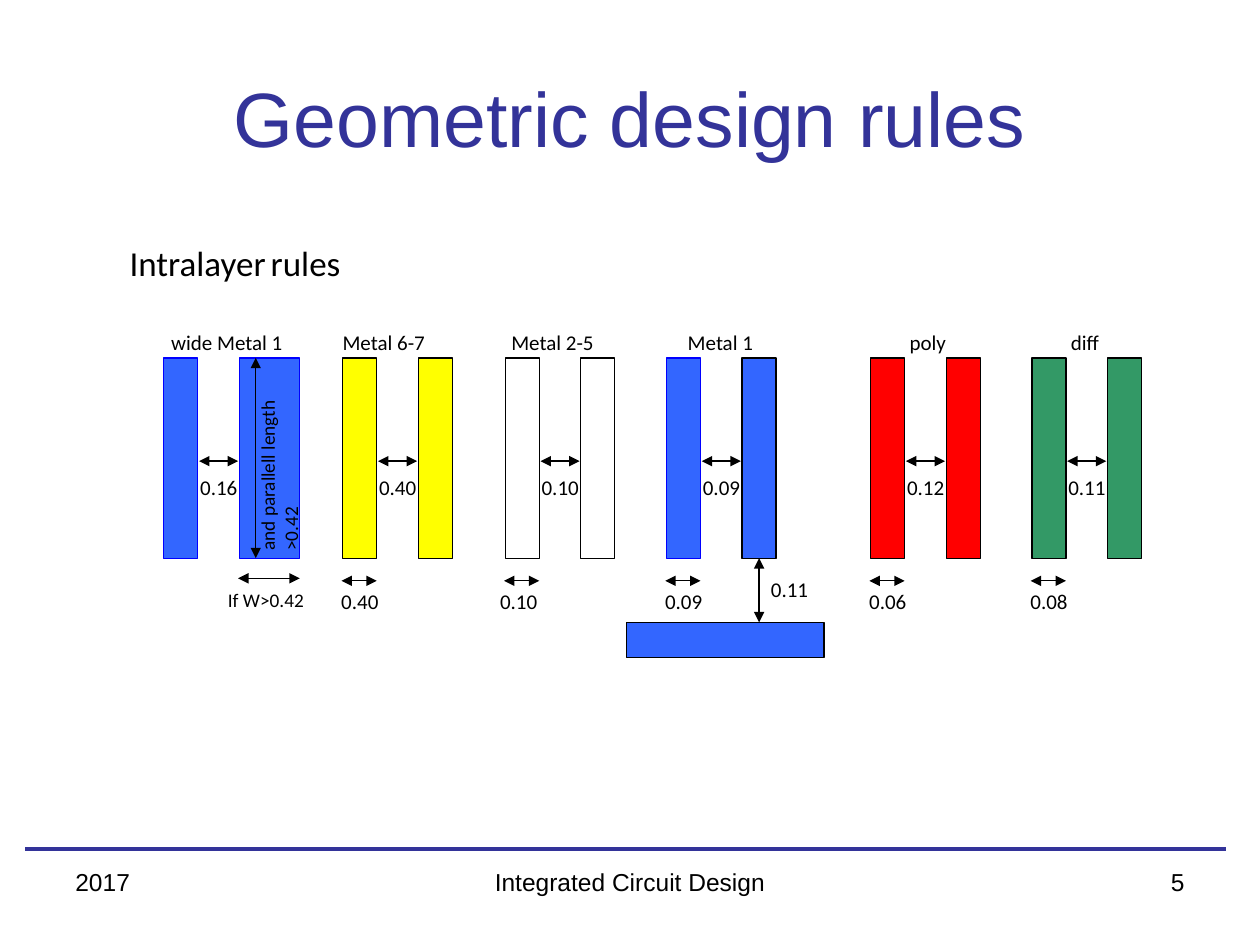
from lxml import etree
from pptx import Presentation
from pptx import util as u
from pptx.dml.color import RGBColor
from pptx.enum import shapes, text
from pptx.oxml.ns import qn

BLACK, BLUE, NAVY = "000000", "3366FF", "333399"
BAR_W, BAR_H, PITCH = 0.27, 1.59, 0.6
LEFT, CENTER, RIGHT = text.PP_ALIGN.LEFT, text.PP_ALIGN.CENTER, text.PP_ALIGN.RIGHT


def color(value):
    return RGBColor.from_string(value)


def add_text(s, box, runs, align=LEFT, anchor=text.MSO_ANCHOR.TOP, font="Calibri", fill=BLACK, vert=None):
    sp = s.shapes.add_textbox(*map(u.Inches, box))
    tf = sp.text_frame
    for name, value in {"word_wrap": True, "vertical_anchor": anchor}.items():
        setattr(tf, name, value)
    if vert:
        tf._txBody.bodyPr.set("vert", vert)
    p = tf.paragraphs[0]
    p.alignment = align
    for words, size in runs:
        r = p.add_run()
        r.text = words
        for name, value in {"name": font, "size": u.Pt(size)}.items():
            setattr(r.font, name, value)
        r.font.color.rgb = color(fill)
    return sp


def add_bar(s, box, fill, line=BLACK):
    sp = s.shapes.add_shape(shapes.MSO_SHAPE.RECTANGLE, *map(u.Inches, box))
    sp.shadow.inherit = False
    sp.fill.solid()
    sp.fill.fore_color.rgb = color(fill)
    sp.line.color.rgb = color(line)
    sp.line.width = u.Pt(0.75)
    return sp


def add_line(s, ends, line=BLACK, width=0.75, arrows=True):
    cxn = s.shapes.add_connector(shapes.MSO_CONNECTOR.STRAIGHT, *map(u.Inches, ends))
    cxn.line.color.rgb = color(line)
    cxn.line.width = u.Pt(width)
    if arrows:
        ln = cxn.line._get_or_add_ln()
        for tag in ("a:headEnd", "a:tailEnd"):
            etree.SubElement(ln, qn(tag), type="triangle")
    etree.SubElement(cxn._element.spPr, qn("a:effectLst"))
    return cxn


def add_header(s, x, y, w):
    add_text(s, (x, y, w, 1.25), [("Geometric design rules", 44)], CENTER,
             text.MSO_ANCHOR.MIDDLE, "Arial", NAVY)
    add_text(s, (x + 0.43, y + 1.57, 2.71, 0.4),
             [("Intralayer", 20), (" ", 12), ("rules", 20)])


def add_footer(s, x, y, w):
    add_line(s, (0.2, y - 0.09, 9.73, y - 0.09), NAVY, 2.25, False)
    columns = (("2017", x, 2.33, LEFT),
               ("Integrated Circuit Design", x + (w - 3.17) / 2, 3.17, CENTER),
               ("5", x + w - 2.33, 2.33, RIGHT))
    for words, left, width, align in columns:
        add_text(s, (left, y, width, 0.52), [(words, 14)], align, font="Arial")


def add_pair(s, x, y, name, name_dx, fill, spacing, lines=(BLACK, BLACK), right_w=BAR_W):
    add_bar(s, (x, y, BAR_W, BAR_H), fill, lines[0])
    right = add_bar(s, (x + PITCH, y, right_w, BAR_H), fill, lines[1])
    add_line(s, (x + BAR_W + 0.01, y + 0.82, x + PITCH - 0.01, y + 0.82))
    add_text(s, (x + 0.19, y + 0.88, 0.55, 0.32), [(spacing, 12)])
    add_text(s, (x + name_dx, 2.57, 1.19, 0.34), [(name, 12)])
    return right


def add_min_width(s, x, y, value, dx=-0.11):
    add_line(s, (x - 0.01, y + 1.77, x + BAR_W, y + 1.77))
    add_text(s, (x + dx, y + 1.78, 0.59, 0.32), [(value, 12)])


def add_wide_metal(s, x, y):
    add_pair(s, x, y, "wide Metal 1", -0.04, BLUE, "0.16", ("0000FF", "0000FF"), 0.48)
    add_line(s, (x + 0.59, y + 1.75, x + 1.08, y + 1.75))
    add_text(s, (x + 0.41, y + 1.78, 0.82, 0.32), [("If W>0.42", 11)])
    add_line(s, (x + 0.73, y, x + 0.73, y + BAR_H))
    add_text(s, (x + 0.68, y - 0.12, 0.42, 1.75),
             [("and parallell length >0.42", 11)], vert="vert270")


def add_metal_1(s, x, y):
    right = add_pair(s, x, y, "Metal 1", 0.07, BLUE, "0.09", ("0000FF", BLACK))
    add_min_width(s, x, y, "0.09")
    add_bar(s, (x - 0.32, y + 2.1, 1.57, 0.28), BLUE)
    center = x + PITCH + BAR_W / 2
    arrow = add_line(s, (center, y + BAR_H, center, y + 2.1))
    arrow.begin_connect(right, 2)
    add_text(s, (x + 0.73, y + 1.69, 0.59, 0.32), [("0.11", 12)])


def add_rules(s, y):
    add_wide_metal(s, 1.3, y)
    layers = (("Metal 6-7", 2.72, -0.1, "FFFF00", "0.40", "0.40", -0.11),
              ("Metal 2-5", 4.01, -0.05, "FFFFFF", "0.10", "0.10", -0.14),
              ("poly", 6.91, 0.21, "FF0000", "0.12", "0.06", -0.11),
              ("diff", 8.19, 0.21, "339966", "0.11", "0.08", -0.11))
    for name, x, name_dx, fill, spacing, width, width_dx in layers:
        add_pair(s, x, y, name, name_dx, fill, spacing)
        add_min_width(s, x, y, width, width_dx)
    add_metal_1(s, 5.29, y)


def main():
    prs = Presentation()
    prs.slide_width, prs.slide_height = u.Inches(10), u.Inches(7.5)
    s = prs.slides.add_slide(prs.slide_layouts[6])
    add_header(s, 0.5, 0.3, 9)
    add_rules(s, 2.84)
    add_footer(s, 0.5, 6.83, 9)
    prs.save("out.pptx")


if __name__ == "__main__":
    main()
